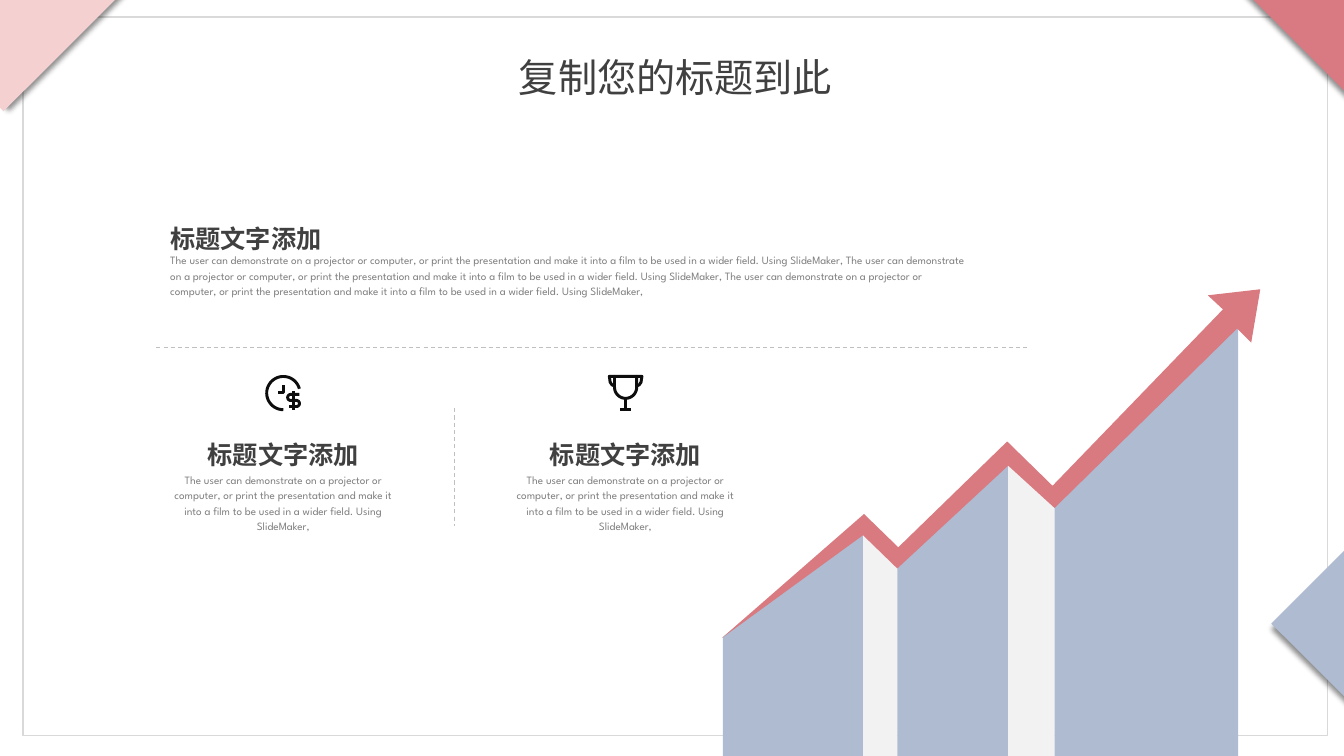
from itertools import pairwise
from math import cos, radians, sin

from lxml.etree import SubElement
from pptx import Presentation
from pptx.dml.color import RGBColor
from pptx.enum.dml import MSO_LINE
from pptx.enum.shapes import MSO_CONNECTOR as Connector, MSO_SHAPE as Shape
from pptx.enum.text import MSO_AUTO_SIZE as AutoSize, PP_ALIGN as Align
from pptx.oxml.ns import qn
from pptx.util import Inches, Pt

WIDTH, HEIGHT = 13.33, 7.5
ROWS = 45
CELL = HEIGHT / ROWS
BLUE, RED, PINK, PALE, INK = "AEBBD0", "D97980", "F4D0D1", "F2F2F2", "0D0D0D"
GREY, FRAME_GREY, WHITE = "BFBFBF", "D9D9D9", "FFFFFF"
LATIN, CHINESE = "League Spartan", "Noto Sans CJK SC"

TITLE = {"size": Pt(28), "name": CHINESE, "color": "404040"}
HEADING = {"size": Pt(18), "name": LATIN, "color": "404040", "bold": True}
BODY = {"size": Pt(8), "name": LATIN, "color": "808080"}

HEADING_TEXT = "标题文字添加"
BODY_TEXT = ("The user can demonstrate on a projector or computer, or print the "
             "presentation and make it into a film to be used in a wider field. "
             "Using SlideMaker,")

CORNERS = [
    ((-3.72, -2.88, 10.08, 6.96), PINK, 0),
    ((76.44, -5.52, 5.4, 12.48), "D97A83", 90),
    ((77.58, 32.82, 8.46, 8.94), BLUE, 90),
]
RIDGE = [(43.02, 37.92), (51.36, 31.26), (53.4, 33.3),
         (60, 27.06), (62.76, 29.7), (73.68, 19.14)]
ARROW = [(72.78, 18.42), (62.64, 28.92), (59.94, 26.28), (53.46, 32.58),
         (51.42, 30.6), (42.96, 37.98), (51.36, 31.86), (53.4, 33.84),
         (60, 27.72), (62.76, 30.24), (73.62, 19.56), (74.46, 20.4),
         (75, 17.22), (71.88, 17.58), (72.78, 18.42)]
CARD_STEP = 20.36


def cells(*values):
    """Turn grid cells into slide lengths."""
    return [Inches(value * CELL) for value in values]


def colour(value):
    """Turn a hex string into a colour."""
    return RGBColor.from_string(value)


def paint(shape, fill=None, line=None, weight=1):
    """Set the fill and outline of a shape and drop its theme shadow."""
    shape.shadow.inherit = False
    if fill:
        shape.fill.solid()
        shape.fill.fore_color.rgb = colour(fill)
    else:
        shape.fill.background()
    if line:
        shape.line.color.rgb = colour(line)
        shape.line.width = Pt(weight)
    else:
        shape.line.fill.background()
    return shape


def add_rectangle(page, place, **style):
    """Add a painted rectangle."""
    return paint(page.shapes.add_shape(Shape.RECTANGLE, *cells(*place)), **style)


def add_corner(page, place, fill, direction):
    """Add a tilted square with a soft shadow."""
    corner = add_rectangle(page, place, fill=fill)
    corner.rotation = 315
    effects = corner._element.spPr.find(qn("a:effectLst"))
    shadow = SubElement(effects, qn("a:outerShdw"), blurRad=str(Pt(4)),
                        dist=str(Pt(4)), dir=str(direction * 60000), rotWithShape="0")
    black = SubElement(shadow, qn("a:srgbClr"), val="000000")
    SubElement(black, qn("a:alpha"), val="44000")


def add_outline(page, *contours, **style):
    """Add one freeform made of one or more point lists."""
    builder = None
    for contour in contours:
        start, *rest = [cells(*point) for point in contour]
        if builder is None:
            builder = page.shapes.build_freeform(*start)
        else:
            builder.move_to(*start)
        builder.add_line_segments(rest, close=False)
    return paint(builder.convert_to_shape(), **style)


def add_dashes(page, *ends):
    """Add a thin dashed divider."""
    divider = page.shapes.add_connector(Connector.STRAIGHT, *cells(*ends))
    divider.line.color.rgb = colour(GREY)
    divider.line.width = Pt(0.75)
    divider.line.dash_style = MSO_LINE.DASH
    SubElement(divider._element.spPr, qn("a:effectLst"))


def add_text(page, place, text, style, align=Align.LEFT, spacing=1.0, wrap=True):
    """Add a one-paragraph text box."""
    box = page.shapes.add_textbox(*cells(*place))
    box.text_frame.word_wrap = wrap
    box.text_frame.auto_size = AutoSize.SHAPE_TO_FIT_TEXT
    para = box.text_frame.paragraphs[0]
    para.alignment = align
    para.line_spacing = spacing
    span = para.add_run()
    span.text = text
    for key, value in style.items():
        if key == "color":
            span.font.color.rgb = colour(value)
        else:
            setattr(span.font, key, value)
    SubElement(span.font._element, qn("a:ea"), typeface=CHINESE)


def add_card(page, heading_place, body_place, body, align):
    """Add a heading with its small text."""
    add_text(page, heading_place, HEADING_TEXT, HEADING, align, 1.2)
    add_text(page, body_place, body, BODY, align, 1.14)


def arc(x, y, radius, start, end, steps=32):
    """List the points of a circular arc, angles running clockwise."""
    angles = [radians(start + (end - start) * step / steps) for step in range(steps + 1)]
    return [(x + radius * cos(angle), y + radius * sin(angle)) for angle in angles]


def add_clock(page):
    """Add the clock and dollar icon."""
    dial = arc(16.86, 23.4, 0.99, -15, -270)
    hands = [(16.86, 22.92), (16.86, 23.38), (16.56, 23.38)]
    bar = [(17.48, 23.3), (17.48, 24.42)]
    curl = [(17.82, 23.48), *arc(17.3, 23.66, 0.18, 270, 90),
            *arc(17.64, 24.02, 0.18, -90, 90), (17.2, 24.2)]
    add_outline(page, dial, hands, bar, curl, line=INK, weight=2.1)


def add_trophy(page):
    """Add the trophy icon."""
    middle, rim = 37.23, 22.4
    bowl = [(middle - 0.66, rim), *arc(middle, 23.05, 0.66, 180, 0),
            (middle + 0.66, rim), (middle - 0.66, rim)]
    handles = [[(middle + side * x, y) for x, y in
                [(0.66, rim), (0.97, rim), (0.92, 22.75), (0.81, 22.91), (0.66, 22.98)]]
               for side in (-1, 1)]
    stem = [(middle, 23.71), (middle, 24.4)]
    foot = [(middle - 0.33, 24.4), (middle + 0.33, 24.4)]
    add_outline(page, bowl, *handles, stem, foot, line=INK, weight=2.1)


def add_growth(page):
    """Add the folded panels and the rising arrow."""
    for number, (left, right) in enumerate(pairwise(RIDGE)):
        panel = [left, right, (right[0], ROWS), (left[0], ROWS), left]
        add_outline(page, panel, fill=PALE if number % 2 else BLUE)
    add_outline(page, ARROW, fill=RED)


def main():
    """Build and save the slide."""
    deck = Presentation()
    deck.slide_width, deck.slide_height = Inches(WIDTH), Inches(HEIGHT)
    page = deck.slides.add_slide(deck.slide_layouts[6])
    add_rectangle(page, (1.38, 1.02, 77.64, 42.78), fill=WHITE, line=FRAME_GREY)
    for corner in CORNERS:
        add_corner(page, *corner)
    add_text(page, (30.18, 2.88, 20.04, 3.42), "复制您的标题到此", TITLE,
             Align.CENTER, wrap=False)
    add_growth(page)
    add_dashes(page, 9.3, 20.7, 61.32, 20.7)
    add_dashes(page, 27.06, 24.3, 27.06, 31.32)
    add_card(page, (9.54, 12.66, 22.38, 2.64), (9.54, 14.7, 48.6, 5.22),
             " ".join([BODY_TEXT] * 3), Align.LEFT)
    for number in range(2):
        shift = number * CARD_STEP
        add_card(page, (8.64 + shift, 25.5, 16.44, 2.64),
                 (9.42 + shift, 27.78, 14.88, 4.26), BODY_TEXT, Align.CENTER)
    add_clock(page)
    add_trophy(page)
    deck.save("out.pptx")


if __name__ == "__main__":
    main()
